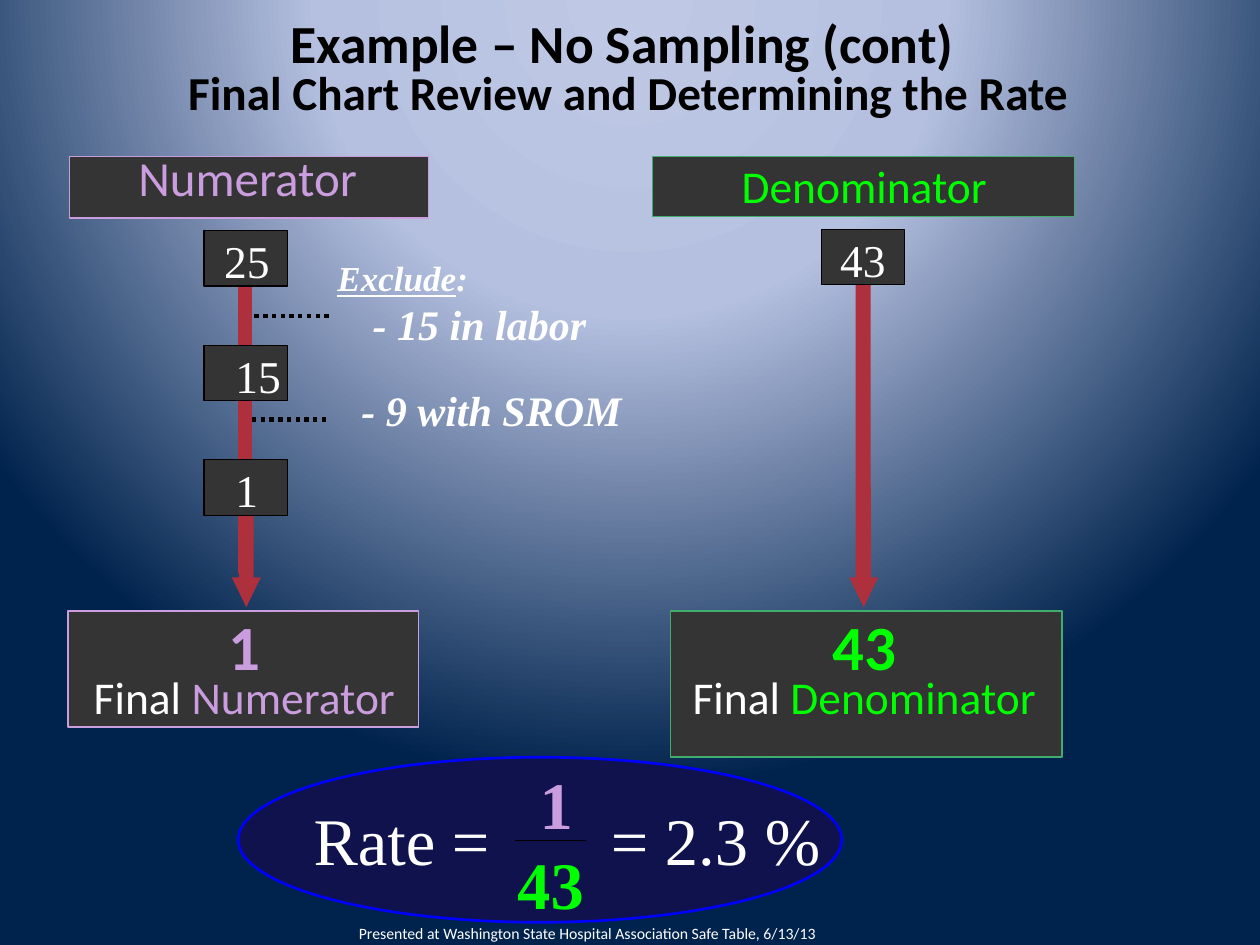
"""Build the slide that works out a rate from a numerator and a denominator."""
from dataclasses import dataclass
from typing import NamedTuple, Optional

from lxml import etree
from pptx import Presentation
from pptx import util as u
from pptx.dml.color import RGBColor
from pptx.enum import dml, shapes, text
from pptx.oxml import ns, parse_xml

PX = 9144
ROW_GAP = 91


@dataclass(frozen=True)
class Theme:
    sans: str = "Calibri"
    serif: str = "Times New Roman"
    white: str = "FFFFFF"
    black: str = "000000"
    panel: str = "343434"
    arrow: str = "AD303C"
    violet: str = "CA9DDE"
    lime: str = "00FF00"
    green: str = "41AC6C"
    navy: str = "10124E"
    blue: str = "0000FF"
    backdrop: tuple = ((0, "BFC9E5"), (40, "B5C0E0"), (100, "00234D"))
    title: float = 30.6
    subtitle: float = 27
    head: float = 28
    label: float = 26
    total: float = 36
    rate: float = 38
    exclude: float = 20
    reason: float = 24
    footer: float = 9


T = Theme()


class Box(NamedTuple):
    x: int
    y: int
    w: int
    h: int


class Run(NamedTuple):
    text: str
    size: float
    color: str = T.white
    font: str = T.serif
    bold: bool = False
    italic: bool = False
    underline: bool = False


class Para(NamedTuple):
    runs: tuple
    indent: int = 0


class Panel(NamedTuple):
    box: Box
    fill: str
    line: Optional[str] = None
    weight: float = 0.75
    kind: shapes.MSO_SHAPE = shapes.MSO_SHAPE.RECTANGLE
    adj: tuple = ()


class Label(NamedTuple):
    box: Box
    paras: tuple
    spacing: float = 1.0
    centred: bool = False
    wrap: bool = False


class Rule(NamedTuple):
    x1: int
    x2: int
    y: int
    weight: float
    dash: Optional[dml.MSO_LINE] = None


def emu(*px: int) -> list:
    return [u.Emu(v * PX) for v in px]


def rgb(color: str) -> RGBColor:
    return RGBColor.from_string(color)


def paint_background(s) -> None:
    s.background.fill.solid()
    stops = "".join(
        f'<a:gs pos="{pos * 1000}"><a:srgbClr val="{color}"/></a:gs>' for pos, color in T.backdrop)
    grad = parse_xml(
        f'<a:gradFill {ns.nsdecls("a")} rotWithShape="1"><a:gsLst>{stops}</a:gsLst>'
        '<a:path path="circle"><a:fillToRect l="50000" t="-80000" r="50000" b="180000"/>'
        '</a:path></a:gradFill>')
    bg = s.element.find(".//" + ns.qn("p:bgPr"))
    bg.replace(bg[0], grad)


def draw_panel(s, panel: Panel) -> None:
    sp = s.shapes.add_shape(panel.kind, *emu(*panel.box))
    sp.shadow.inherit = False
    for i, value in enumerate(panel.adj):
        sp.adjustments[i] = value
    sp.fill.solid()
    sp.fill.fore_color.rgb = rgb(panel.fill)
    if panel.line:
        sp.line.color.rgb = rgb(panel.line)
        sp.line.width = u.Pt(panel.weight)
    else:
        sp.line.fill.background()


def draw_label(s, label: Label) -> None:
    tf = s.shapes.add_textbox(*emu(*label.box)).text_frame
    tf.word_wrap = label.wrap
    for i, para in enumerate(label.paras):
        p = tf.add_paragraph() if i else tf.paragraphs[0]
        if para.indent:
            p._p.get_or_add_pPr().set("marL", str(para.indent * PX))
        p.line_spacing = label.spacing
        p.alignment = text.PP_ALIGN.CENTER if label.centred else text.PP_ALIGN.LEFT
        for run in para.runs:
            r = p.add_run()
            r.text = run.text
            r.font.color.rgb = rgb(run.color)
            fmt = {"name": run.font, "size": u.Pt(run.size), "bold": run.bold,
                   "italic": run.italic, "underline": run.underline}
            for name, value in fmt.items():
                setattr(r.font, name, value)


def draw_rule(s, rule: Rule) -> None:
    ln = s.shapes.add_connector(
        shapes.MSO_CONNECTOR.STRAIGHT, *emu(rule.x1, rule.y, rule.x2, rule.y))
    ln.line.color.rgb = rgb(T.black)
    ln.line.width = u.Pt(rule.weight)
    if rule.dash:
        ln.line.dash_style = rule.dash
    etree.SubElement(ln._element.spPr, ns.qn("a:effectLst"))


def arrow(x: int, bar: Box) -> tuple:
    head = Panel(Box(x, 386, 23, 96), T.arrow, kind=shapes.MSO_SHAPE.DOWN_ARROW, adj=(0.5, 1.028))
    return head, Panel(bar, T.arrow)


def count(x: int, y: int) -> Panel:
    return Panel(Box(x, y, 66, 44), T.panel, T.black)


def line(value: str, size: float, **style) -> Para:
    return Para((Run(value, size, **style),))


def final(x: int, value: str, name: str, color: str) -> Label:
    return Label(Box(x, 491, 294, 50), (
        line(value, T.total, color=color, font=T.sans, bold=True),
        Para((Run("Final ", T.label, font=T.sans), Run(name, T.label, color, T.sans)))),
        0.75, True, True)


PANELS = (
    Panel(Box(189, 601, 479, 131), T.navy, T.blue, 1.5, shapes.MSO_SHAPE.OVAL),
    *arrow(674, Box(679, 203, 12, 257)),
    *arrow(184, Box(189, 203, 11, 252)),
    count(652, 182),
    *(count(162, 183 + i * ROW_GAP) for i in range(3)),
    Panel(Box(532, 485, 311, 116), T.panel, T.green),
    Panel(Box(54, 485, 278, 92), T.panel, T.violet),
    Panel(Box(55, 124, 285, 49), T.panel, T.violet),
    Panel(Box(518, 124, 335, 48), T.panel, T.green),
)
NOTE = {"bold": True, "italic": True}
LABELS = (
    Label(Box(32, 13, 933, 63), (
        line("Example – No Sampling (cont) ", T.title, color=T.black, font=T.sans, bold=True),
        line("Final Chart Review and Determining the Rate", T.subtitle,
             color=T.black, font=T.sans, bold=True)), 0.8, True, True),
    Label(Box(58, 129, 277, 42), (line("Numerator", T.head, color=T.violet, font=T.sans),),
          0.6, True, True),
    Label(Box(522, 129, 328, 41), (line("Denominator", T.label, color=T.lime, font=T.sans),),
          0.8, True, True),
    final(539, "43", "Denominator", T.lime),
    final(47, "1", "Numerator", T.violet),
    Label(Box(258, 199, 228, 84), (
        Para((Run("Exclude", T.exclude, underline=True, **NOTE), Run(":", T.exclude, **NOTE))),
        Para((Run("- 15 in labor", T.reason, **NOTE),), 28))),
    Label(Box(277, 300, 274, 50), (line("- 9 with SROM", T.reason, **NOTE),), wrap=True),
    Label(Box(239, 629, 172, 73), (line("Rate =", T.rate),), wrap=True),
    Label(Box(400, 601, 83, 138), (
        line("1", T.rate, color=T.violet, bold=True),
        Para((Run("43", T.rate, T.lime, bold=True), Run(" ", T.label)))), centred=True),
    Label(Box(475, 629, 188, 74), (line("= 2.3 %", T.rate),)),
    Label(Box(657, 179, 57, 54), (line("43", T.label),)),
    *(Label(Box(x, 180 + i * ROW_GAP, w, 54), (line(value, T.label),))
      for i, (x, w, value) in enumerate(((168, 57, "25"), (177, 57, "15"), (177, 38, "1")))),
    Label(Box(275, 728, 467, 25), (
        line("Presented at Washington State Hospital Association Safe Table, 6/13/13",
             T.footer, font=T.sans),), wrap=True),
)
RULES = (
    Rule(202, 261, 251, 2.5, dml.MSO_LINE.ROUND_DOT),
    Rule(200, 259, 333, 2.5, dml.MSO_LINE.ROUND_DOT),
    Rule(409, 465, 667, 0.5),
)


def main() -> None:
    prs = Presentation()
    prs.slide_width, prs.slide_height = emu(1000, 750)
    s = prs.slides.add_slide(prs.slide_layouts[6])
    paint_background(s)
    for draw, items in ((draw_panel, PANELS), (draw_rule, RULES), (draw_label, LABELS)):
        for item in items:
            draw(s, item)
    prs.save("out.pptx")


if __name__ == "__main__":
    main()
